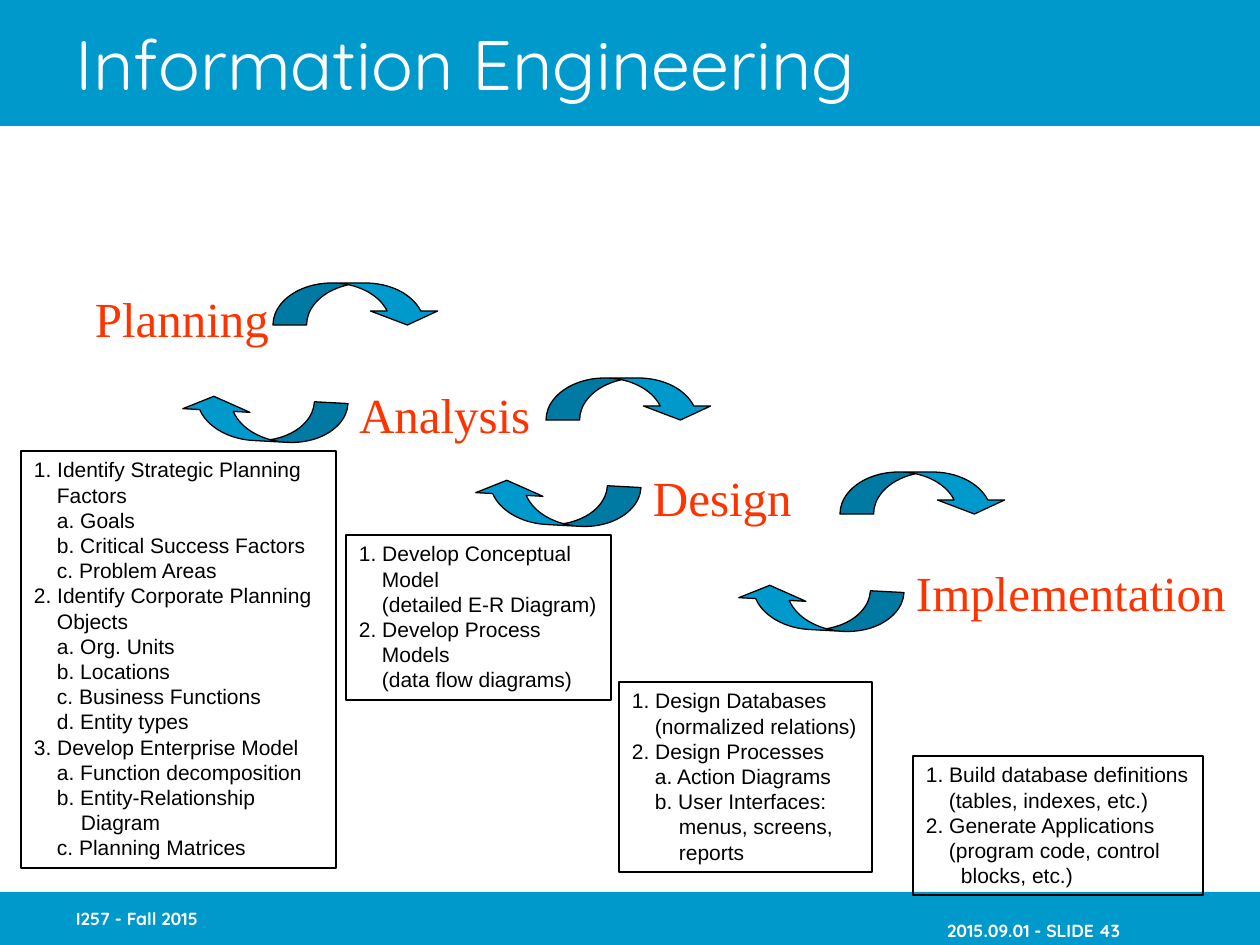
"""Build the Information Engineering slide: four staggered stages with task boxes."""
from dataclasses import dataclass

from pptx import Presentation
from pptx.dml.color import RGBColor
from pptx.enum.shapes import MSO_SHAPE
from pptx.enum.text import MSO_ANCHOR, PP_ALIGN
from pptx.util import Pt

EMU_PER_PX = 914400 / 126
SLIDE_W, SLIDE_H = 1260, 945
INSET_X, INSET_Y = 13, 6
ARROW_SIZE = (168, 42)
ARROW_ADJ = (0.8, 1.6, 0.333)
BACK_TURN = 183.1


@dataclass(frozen=True)
class Theme:
    blue: RGBColor = RGBColor(0x00, 0x99, 0xCC)
    white: RGBColor = RGBColor(0xFF, 0xFF, 0xFF)
    black: RGBColor = RGBColor(0x00, 0x00, 0x00)
    red: RGBColor = RGBColor(0xFF, 0x33, 0x00)
    line: float = 0.75


THEME = Theme()
TITLE = dict(name="Quicksand", size=Pt(40), color=THEME.white)
FOOTER = dict(name="Quicksand", size=Pt(10), bold=True, color=THEME.white)
STAGE = dict(name="Times New Roman", size=Pt(28), color=THEME.red)
TASK = dict(name="Arial", size=Pt(12), color=THEME.black)

BARS = [(0, 0, SLIDE_W, 126), (0, 892, SLIDE_W, 53)]
CAPTIONS = [
    ("Information Engineering", (63, 0, 1071, 126), TITLE, PP_ALIGN.LEFT),
    ("I257 - Fall 2015", (63, 892, 262, 53), FOOTER, PP_ALIGN.LEFT),
    ("2015.09.01 - SLIDE 43", (858, 915, 262, 30), FOOTER, PP_ALIGN.RIGHT),
]
STAGES = [
    ("Planning", (82, 282, 199, 72)),
    ("Analysis", (346, 378, 197, 72)),
    ("Design", (640, 462, 164, 72)),
    ("Implementation", (903, 557, 335, 72)),
]
FORWARD = [(273, 283), (546, 378), (840, 472)]
BACKWARD = [(179, 399), (472, 483), (735, 588)]

ITEM, SUB, DEEP, CONT = 0, 23, 47, 35
TASKS = [
    ((21, 451, 315, 417), [
        (ITEM, "1. Identify Strategic Planning"),
        (SUB, "Factors"),
        (SUB, "a. Goals"),
        (SUB, "b. Critical Success Factors"),
        (SUB, "c. Problem Areas"),
        (ITEM, "2. Identify Corporate Planning"),
        (SUB, "Objects"),
        (SUB, "a. Org. Units"),
        (SUB, "b. Locations"),
        (SUB, "c. Business Functions"),
        (SUB, "d. Entity types"),
        (ITEM, "3. Develop Enterprise Model"),
        (SUB, "a. Function decomposition"),
        (SUB, "b. Entity-Relationship"),
        (DEEP, "Diagram"),
        (SUB, "c. Planning Matrices"),
    ]),
    ((346, 535, 265, 165), [
        (ITEM, "1. Develop Conceptual"),
        (SUB, "Model"),
        (SUB, "(detailed E-R Diagram)"),
        (ITEM, "2. Develop Process"),
        (SUB, "Models"),
        (SUB, "(data flow diagrams)"),
    ]),
    ((619, 682, 253, 190), [
        (ITEM, "1. Design Databases"),
        (SUB, "(normalized relations)"),
        (ITEM, "2. Design Processes"),
        (SUB, "a. Action Diagrams"),
        (SUB, "b. User Interfaces:"),
        (DEEP, "menus, screens,"),
        (DEEP, "reports"),
    ]),
    ((913, 756, 290, 139), [
        (ITEM, "1. Build database definitions"),
        (SUB, "(tables, indexes, etc.)"),
        (ITEM, "2. Generate Applications"),
        (SUB, "(program code, control"),
        (CONT, "blocks, etc.)"),
    ]),
]


def px(n):
    return round(n * EMU_PER_PX)


def add_shape(s, kind, box, fill=None, line=None):
    sp = s.shapes.add_shape(kind, *map(px, box))
    sp.shadow.inherit = False
    if fill is None:
        sp.fill.background()
    else:
        sp.fill.solid()
        sp.fill.fore_color.rgb = fill
    if line is None:
        sp.line.fill.background()
    else:
        sp.line.color.rgb = line
        sp.line.width = Pt(THEME.line)
    return sp


def write(sp, lines, style, anchor=MSO_ANCHOR.TOP, align=PP_ALIGN.LEFT):
    tf = sp.text_frame
    frame = dict(word_wrap=True, vertical_anchor=anchor, margin_left=px(INSET_X),
                 margin_right=0, margin_top=px(INSET_Y), margin_bottom=px(INSET_Y))
    for key, value in frame.items():
        setattr(tf, key, value)
    for i, (indent, text) in enumerate(lines):
        p = tf.add_paragraph() if i else tf.paragraphs[0]
        p.alignment = align
        if indent:
            p._p.get_or_add_pPr().set("marL", str(px(indent)))
        r = p.add_run()
        r.text = text
        for key, value in style.items():
            if key == "color":
                r.font.color.rgb = value
            else:
                setattr(r.font, key, value)


def add_arrow(s, corner, rotation=0):
    sp = add_shape(s, MSO_SHAPE.CURVED_DOWN_ARROW, corner + ARROW_SIZE,
                   THEME.blue, THEME.black)
    for i, value in enumerate(ARROW_ADJ):
        sp.adjustments[i] = value
    sp.rotation = rotation


def main():
    prs = Presentation()
    prs.slide_width, prs.slide_height = px(SLIDE_W), px(SLIDE_H)
    s = prs.slides.add_slide(prs.slide_layouts[6])
    for box in BARS:
        add_shape(s, MSO_SHAPE.RECTANGLE, box, THEME.blue)
    for text, box, style, align in CAPTIONS:
        sp = s.shapes.add_textbox(*map(px, box))
        write(sp, [(ITEM, text)], style, MSO_ANCHOR.MIDDLE, align)
    for text, box in STAGES:
        write(s.shapes.add_textbox(*map(px, box)), [(ITEM, text)], STAGE)
    for corner in FORWARD:
        add_arrow(s, corner)
    for corner in BACKWARD:
        add_arrow(s, corner, BACK_TURN)
    for box, lines in TASKS:
        sp = add_shape(s, MSO_SHAPE.RECTANGLE, box, line=THEME.black)
        write(sp, lines, TASK)
    prs.save("out.pptx")


if __name__ == "__main__":
    main()
